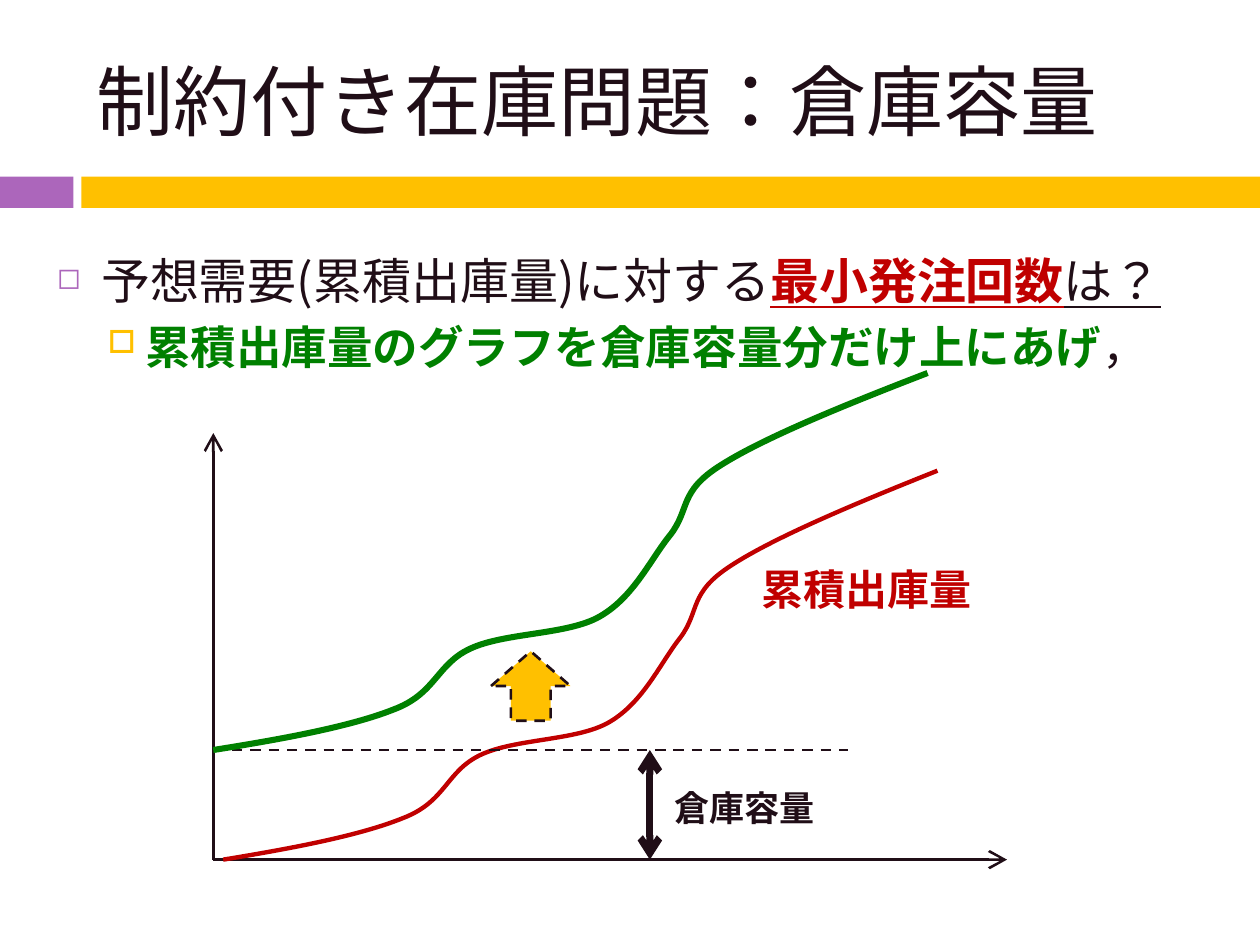
from dataclasses import dataclass
from typing import Optional

from lxml.etree import SubElement
from pptx import Presentation
from pptx.dml.color import RGBColor
from pptx.enum.dml import MSO_LINE_DASH_STYLE as Dash
from pptx.enum.lang import MSO_LANGUAGE_ID as Lang
from pptx.enum.shapes import MSO_CONNECTOR as Conn, MSO_SHAPE as Shape
from pptx.enum.text import MSO_ANCHOR as Anchor, PP_ALIGN as Align
from pptx.oxml.ns import qn
from pptx.util import Cm, Pt

FONT = "Noto Sans CJK JP"
HUES = {"ink": "200E17", "red": "C00000", "green": "008000",
        "gold": "FFC000", "violet": "AC66BB"}

# Cubic Bezier points of the demand curve, in percent of its box
CURVE = [(0, 100), (9.7, 97.1), (19.2, 93.8), (25.2, 89.3),
         (31.2, 85.1), (31.2, 77.3), (36, 73.1),
         (40.9, 68.8), (49.6, 69.5), (54.1, 64.6),
         (58.9, 59.4), (61.2, 49.4), (64, 42.9),
         (66.8, 36), (65.1, 31.5), (71.1, 24.4),
         (77.1, 17.2), (88.5, 8.4), (100, 0)]

LEFT, BASE, LIMIT = 4.3, 17.33, 15.12  # axis, zero level, raised level


@dataclass
class Span:
    text: str
    hue: str = "ink"
    bold: bool = False
    under: bool = False


@dataclass
class Item:
    spans: list[Span]
    size: float
    level: int
    indent: float
    hang: float
    before: float
    mark: str
    hue: str
    scale: int


@dataclass
class Line:
    start: tuple[float, float]
    end: tuple[float, float]
    width: float = 1.5
    dash: bool = False
    head: bool = False
    tail: bool = False
    tip: str = "med"


@dataclass
class Trend:
    box: tuple[float, float, float, float]
    hue: str
    width: float


@dataclass
class Label:
    span: Span
    size: float
    box: tuple[float, float, float, float]
    wrap: bool


ITEMS = [
    Item([Span("予想需要(累積出庫量)に対する"),
          Span("最小発注回数", "red", True, True),
          Span("は？", under=True)],
         28, 0, 0.89, 0.89, 7, "◻", "violet", 60),
    Item([Span("累積出庫量のグラフを倉庫容量分だけ上にあげ", "green", True),
          Span("，")],
         26, 1, 1.78, 0.76, 5.5, "□", "gold", 70),
]
BARS = [((0, 3.56, 1.48, 0.63), "violet"), ((1.64, 3.56, 23.76, 0.63), "gold")]
AXES = [Line((LEFT, BASE), (LEFT, 8.73), tail=True, tip="lg"),
        Line((LEFT, BASE), (20.3, BASE), tail=True, tip="lg")]
LEVEL = Line((LEFT, LIMIT), (17.1, LIMIT), dash=True)
GAP = Line((13.1, LIMIT), (13.1, BASE), 4, head=True, tail=True)
DEMAND = Trend((4.5, 9.49, 14.4, 7.84), "red", 2.5)
RAISED = Trend((LEFT, 7.52, 14.4, 7.6), "green", 3.5)
LABELS = [
    Label(Span("累積出庫量", "red", True), 24, (15.1, 11.24, 5, 1.27), True),
    Label(Span("倉庫容量", bold=True), 20, (13.34, 15.73, 3.35, 1.12), False),
]


def rgb(hue: str) -> RGBColor:
    return RGBColor.from_string(HUES[hue])


def cms(nums) -> list[Cm]:
    return [Cm(n) for n in nums]


def write(para, span: Span, size: float) -> None:
    run = para.add_run()
    run.text = span.text
    font = run.font
    font.name, font.size = FONT, Pt(size)
    font.bold, font.underline = span.bold, span.under
    font.language_id = Lang.JAPANESE
    font.color.rgb = rgb(span.hue)
    SubElement(font._element, qn("a:ea"), typeface=FONT)


def mark(para, item: Item) -> None:
    """Set the hanging indent and the bullet."""
    props = para._p.get_or_add_pPr()
    props.set("marL", str(Cm(item.indent)))
    props.set("indent", str(-Cm(item.hang)))
    tint = SubElement(props, qn("a:buClr"))
    SubElement(tint, qn("a:srgbClr"), val=HUES[item.hue])
    SubElement(props, qn("a:buSzPct"), val=str(item.scale * 1000))
    SubElement(props, qn("a:buChar"), char=item.mark)


def stroke(line, hue: str, width: float, dash: bool = False) -> None:
    line.color.rgb = rgb(hue)
    line.width = Pt(width)
    if dash:
        line.dash_style = Dash.DASH


def block(slide, kind: Shape, box, hue: str, edge: Optional[str] = None) -> None:
    shape = slide.shapes.add_shape(kind, *cms(box))
    shape.shadow.inherit = False
    shape.fill.solid()
    shape.fill.fore_color.rgb = rgb(hue)
    if edge:
        stroke(shape.line, edge, 1.5, True)
    else:
        shape.line.fill.background()


def rule(slide, line: Line) -> None:
    link = slide.shapes.add_connector(Conn.STRAIGHT, *cms(line.start + line.end))
    stroke(link.line, "ink", line.width, line.dash)
    props = link._element.spPr
    for name, shown in (("a:headEnd", line.head), ("a:tailEnd", line.tail)):
        if shown:
            SubElement(props.find(qn("a:ln")), qn(name),
                       type="arrow", w=line.tip, len=line.tip)
    SubElement(props, qn("a:effectLst"))


def bend(shape) -> None:
    """Turn each three straight segments into one cubic Bezier."""
    route = next(shape._element.iter(qn("a:path")))
    legs = route.findall(qn("a:lnTo"))
    for i in range(0, len(legs), 3):
        arc = SubElement(route, qn("a:cubicBezTo"))
        for leg in legs[i:i + 3]:
            arc.append(leg[0])
            route.remove(leg)


def plot(slide, trend: Trend) -> None:
    """Draw the demand curve, fitted to the box of the trend."""
    left, top, wide, high = trend.box
    spots = [(Cm(left + x * wide / 100), Cm(top + y * high / 100))
             for x, y in CURVE]
    form = slide.shapes.build_freeform(*spots[0])
    form.add_line_segments(spots[1:], close=False)
    shape = form.convert_to_shape()
    bend(shape)
    shape.shadow.inherit = False
    shape.fill.background()
    stroke(shape.line, trend.hue, trend.width)


def head(slide, text: str) -> None:
    title = slide.shapes.title
    title.left, title.top, title.width, title.height = cms((1.7, 0.64, 22.66, 2.74))
    frame = title.text_frame
    frame.vertical_anchor = Anchor.MIDDLE
    frame.paragraphs[0].alignment = Align.LEFT
    write(frame.paragraphs[0], Span(text), 44)


def bullets(slide) -> None:
    frame = slide.shapes.add_textbox(*cms((0.9, 4.93, 23.8, 13.59))).text_frame
    frame.word_wrap = True
    for i, item in enumerate(ITEMS):
        para = frame.add_paragraph() if i else frame.paragraphs[0]
        para.level = item.level
        para.space_before = Pt(item.before)
        mark(para, item)
        for span in item.spans:
            write(para, span, item.size)


def tag(slide, label: Label) -> None:
    frame = slide.shapes.add_textbox(*cms(label.box)).text_frame
    frame.word_wrap = label.wrap
    write(frame.paragraphs[0], label.span, label.size)


def main() -> None:
    deck = Presentation()
    deck.slide_width, deck.slide_height = Cm(25.4), Cm(19.05)
    slide = deck.slides.add_slide(deck.slide_layouts[5])
    for box, hue in BARS:
        block(slide, Shape.RECTANGLE, box, hue)
    head(slide, "制約付き在庫問題：倉庫容量")
    bullets(slide)
    for axis in AXES:
        rule(slide, axis)
    plot(slide, DEMAND)
    rule(slide, LEVEL)
    plot(slide, RAISED)
    block(slide, Shape.UP_ARROW, (9.9, 13.13, 1.6, 1.4), "gold", "ink")
    rule(slide, GAP)
    for label in LABELS:
        tag(slide, label)
    deck.save("out.pptx")


if __name__ == "__main__":
    main()
